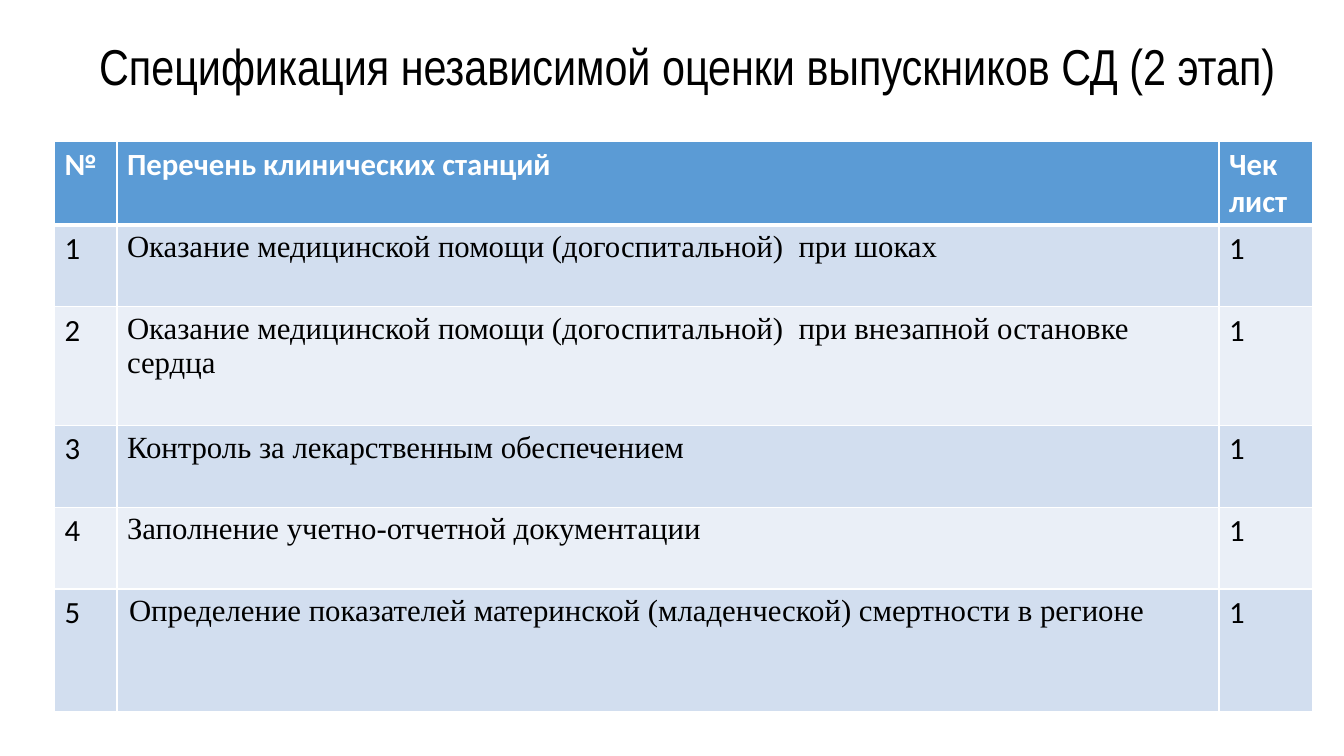
from lxml.etree import SubElement
from pptx import Presentation
from pptx.dml.color import RGBColor
from pptx.enum.text import MSO_ANCHOR, PP_ALIGN
from pptx.oxml.ns import qn
from pptx.util import Inches, Pt

BLACK, WHITE = "000000", "FFFFFF"
HEADER_FILL, BAND_FILLS = "5B9BD5", ("D2DEEF", "EAEFF7")

TITLE = "Спецификация независимой оценки выпускников СД (2 этап)"
HEADER = ("№", "Перечень клинических станций", "Чек лист")
STATIONS = (
    "Оказание медицинской помощи (догоспитальной)  при шоках",
    "Оказание медицинской помощи (догоспитальной)  при внезапной остановке сердца",
    "Контроль за лекарственным обеспечением",
    "Заполнение учетно-отчетной документации",
    "Определение показателей материнской (младенческой) смертности в регионе",
)
COL_WIDTHS = (0.62, 10.93, 0.93)
ROW_HEIGHTS = (0.81, 0.81, 1.18, 0.81, 0.81, 1.22)


def color(value):
    return RGBColor.from_string(value)


def add_run(p, text, size, font, ink, bold=False):
    r = p.add_run()
    r.text = text
    r.font.size, r.font.name, r.font.bold = Pt(size), font, bold
    r.font.color.rgb = color(ink)


def add_title(s, text):
    tf = s.shapes.add_textbox(Inches(0.31), Inches(0.4), Inches(13.02), Inches(0.57)).text_frame
    tf.word_wrap = True
    tf.vertical_anchor = MSO_ANCHOR.MIDDLE
    p = tf.paragraphs[0]
    p.alignment, p.line_spacing = PP_ALIGN.CENTER, 0.9
    add_run(p, text, 36, "Arial Narrow", BLACK)


def set_borders(cell, widths):
    """Draw white borders; they must stand before the fill in tcPr."""
    tc_pr = cell._tc.get_or_add_tcPr()
    for side, width in widths.items():
        ln = SubElement(tc_pr, qn(f"a:{side}"), w=str(Pt(width)))
        fill = SubElement(ln, qn("a:solidFill"))
        SubElement(fill, qn("a:srgbClr"), val=WHITE)


def fill_cell(cell, text, fill, font="Calibri", ink=BLACK, bold=False, top=1, bottom=1):
    set_borders(cell, {"lnL": 1, "lnR": 1, "lnT": top, "lnB": bottom})
    cell.fill.solid()
    cell.fill.fore_color.rgb = color(fill)
    add_run(cell.text_frame.paragraphs[0], text, 22, font, ink, bold)


def add_stations_table(s):
    table = s.shapes.add_table(
        len(ROW_HEIGHTS), len(COL_WIDTHS), Inches(0.54), Inches(1.4),
        Inches(sum(COL_WIDTHS)), Inches(sum(ROW_HEIGHTS))).table
    for column, width in zip(table.columns, COL_WIDTHS):
        column.width = Inches(width)
    for row, height in zip(table.rows, ROW_HEIGHTS):
        row.height = Inches(height)

    # Header row
    for col, text in enumerate(HEADER):
        fill_cell(table.cell(0, col), text, HEADER_FILL, ink=WHITE, bold=True, bottom=3)

    # One banded row per station
    for n, station in enumerate(STATIONS, 1):
        fill = BAND_FILLS[(n - 1) % 2]
        for col, text in enumerate((str(n), station, "1")):
            font = "Times New Roman" if col == 1 else "Calibri"
            fill_cell(table.cell(n, col), text, fill, font, top=3 if n == 1 else 1)

    # The last station has its own margins and line spacing
    last = table.cell(len(STATIONS), 1)
    last.margin_left = last.margin_right = Inches(0.12)
    last.margin_top = last.margin_bottom = 0
    last.text_frame.paragraphs[0].line_spacing = 1.15


def main():
    prs = Presentation()
    prs.slide_width, prs.slide_height = Inches(13.33), Inches(7.5)
    s = prs.slides.add_slide(prs.slide_layouts[6])
    add_title(s, TITLE)
    add_stations_table(s)
    prs.save("out.pptx")


if __name__ == "__main__":
    main()
